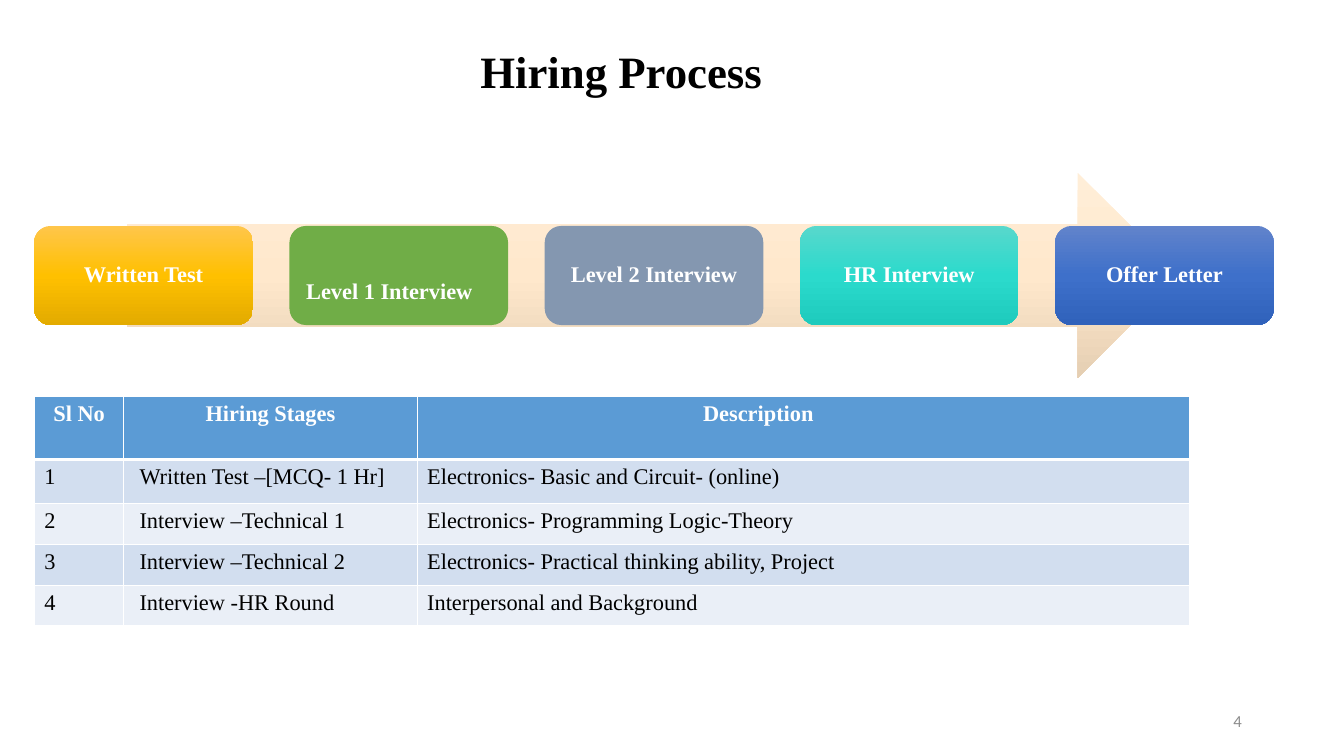
import pptx
import pptx.chart.data
import pptx.dml.color
import pptx.enum.shapes
import pptx.enum.text
import pptx.oxml
import pptx.oxml.ns
import pptx.util
from copy import deepcopy

Pt = pptx.util.Pt
Shape = pptx.enum.shapes.MSO_SHAPE
Align = pptx.enum.text.PP_ALIGN
Anchor = pptx.enum.text.MSO_ANCHOR
SERIF = "Times New Roman"

STAGES = [
    ("Written Test", ["FFC64B", "FFC000", "E3AB00"]),
    ("Level 1 Interview", ["70AD47"]),
    ("Level 2 Interview", ["8497B0"]),
    ("HR Interview", ["58D8CC", "2BDACC", "1ECBBD"]),
    ("Offer Letter", ["6183CB", "3E70CA", "3062BB"]),
]
ROWS = [
    ("Sl No", "Hiring Stages", "Description"),
    ("1", "Written Test –[MCQ- 1 Hr]", "Electronics- Basic and Circuit- (online)"),
    ("2", "Interview –Technical 1", "Electronics- Programming Logic-Theory"),
    ("3", "Interview –Technical 2", "Electronics- Practical thinking ability, Project"),
    ("4", "Interview -HR Round", "Interpersonal and Background"),
]


def color(code):
    """Turn a hex string into a colour."""
    return pptx.dml.color.RGBColor.from_string(code)


def write(frame, text, size, code, bold=False, align=Align.LEFT, face=SERIF):
    """Add one formatted run to the first paragraph of a frame."""
    para = frame.paragraphs[0]
    para.alignment = align
    run = para.add_run()
    run.text = text
    run.font.name = face
    run.font.size = Pt(size)
    run.font.bold = bold
    run.font.color.rgb = color(code)
    return para


def paint(shape, codes):
    """Fill a shape with one colour or a downward three-stop gradient."""
    shape.shadow.inherit = False
    shape.line.fill.background()
    fill = shape.fill
    if len(codes) == 1:
        fill.solid()
        fill.fore_color.rgb = color(codes[0])
        return
    fill.gradient()
    fill.gradient_angle = 270
    stops = shape.element.spPr.find(pptx.oxml.ns.qn("a:gradFill")).gsLst
    stops.insert(1, deepcopy(stops[0]))
    for stop, code, place in zip(fill.gradient_stops, codes, (0, 0.5, 1)):
        stop.color.rgb = color(code)
        stop.position = place


def edge(cell, head, first):
    """Draw the white borders of a cell, thicker below the header."""
    props = cell._tc.get_or_add_tcPr()
    thick = {"lnB": head, "lnT": first}
    for side in ("lnL", "lnR", "lnT", "lnB"):
        width = Pt(3 if thick.get(side) else 1)
        props.append(pptx.oxml.parse_xml(
            f'<a:{side} {pptx.oxml.ns.nsdecls("a")} w="{width}"><a:solidFill>'
            f'<a:srgbClr val="FFFFFF"/></a:solidFill></a:{side}>'))


def heading(slide, left, top, width, height):
    """Place the slide title."""
    title = slide.shapes.title
    title.left, title.top = Pt(left), Pt(top)
    title.width, title.height = Pt(width), Pt(height)
    frame = title.text_frame
    frame.vertical_anchor = Anchor.MIDDLE
    write(frame, "Hiring Process", 32, "000000", True, Align.CENTER)


def process(slide, left, top, width, height):
    """Draw the arrow with the stage cards spread evenly over it."""
    arrow = slide.shapes.add_shape(
        Shape.RIGHT_ARROW, Pt(left + 66.2), Pt(top), Pt(752.4), Pt(height))
    paint(arrow, ["FFEED8", "FFE8CC", "E5CFB3"])
    wide, high = 156.2, 70.8
    step = (width - wide) / (len(STAGES) - 1)
    for i, (name, codes) in enumerate(STAGES):
        card = slide.shapes.add_shape(
            Shape.ROUNDED_RECTANGLE, Pt(left + i * step),
            Pt(top + (height - high) / 2), Pt(wide), Pt(high))
        paint(card, codes)
        frame = card.text_frame
        frame.word_wrap = True
        frame.vertical_anchor = Anchor.MIDDLE
        frame.margin_left = frame.margin_right = Pt(8.5)
        low = name == "Level 1 Interview"
        frame.margin_top = Pt(28 if low else 4)
        frame.margin_bottom = Pt(4)
        para = write(frame, name, 16, "FFFFFF", True,
                     Align.LEFT if low else Align.CENTER)
        para.line_spacing = 0.9


def rounds(slide, left, top, width, height):
    """Build the table of hiring stages."""
    table = slide.shapes.add_table(
        len(ROWS), 3, Pt(left), Pt(top), Pt(width), Pt(height)).table
    for col, wide in zip(table.columns, (64, 209.5, width - 273.5)):
        col.width = Pt(wide)
    for row, high in zip(table.rows, (45, 31.4, 29.2, 29.2, 29.2)):
        row.height = Pt(high)
    for r, texts in enumerate(ROWS):
        head = r == 0
        code = "5B9BD5" if head else ("EAEFF7", "D2DEEF")[r % 2]
        for c, text in enumerate(texts):
            cell = table.cell(r, c)
            edge(cell, head, r == 1)
            cell.fill.solid()
            cell.fill.fore_color.rgb = color(code)
            if c == 1 and not head:
                cell.margin_left = Pt(11.2)
            if c == 2 and head:
                cell.margin_right = Pt(71.2)
            write(cell.text_frame, text, 16, "FFFFFF" if head else "000000",
                  head, Align.CENTER if head else Align.LEFT)


def number(slide, left, top, width, height):
    """Place the page number."""
    frame = slide.shapes.add_textbox(
        Pt(left), Pt(top), Pt(width), Pt(height)).text_frame
    frame.word_wrap = True
    frame.vertical_anchor = Anchor.MIDDLE
    write(frame, "4", 12, "8C8C8C", align=Align.RIGHT, face="Calibri")


def main():
    """Build and save the slide."""
    deck = pptx.Presentation()
    deck.slide_width, deck.slide_height = Pt(960), Pt(540)
    slide = deck.slides.add_slide(deck.slide_layouts[5])
    heading(slide, 10, 27.4, 867.6, 46)
    process(slide, 24.5, 123.4, 885.4, 146.8)
    rounds(slide, 24.5, 283.2, 825, 164)
    number(slide, 678.2, 500.4, 216, 28.8)
    deck.save("out.pptx")


if __name__ == "__main__":
    main()
